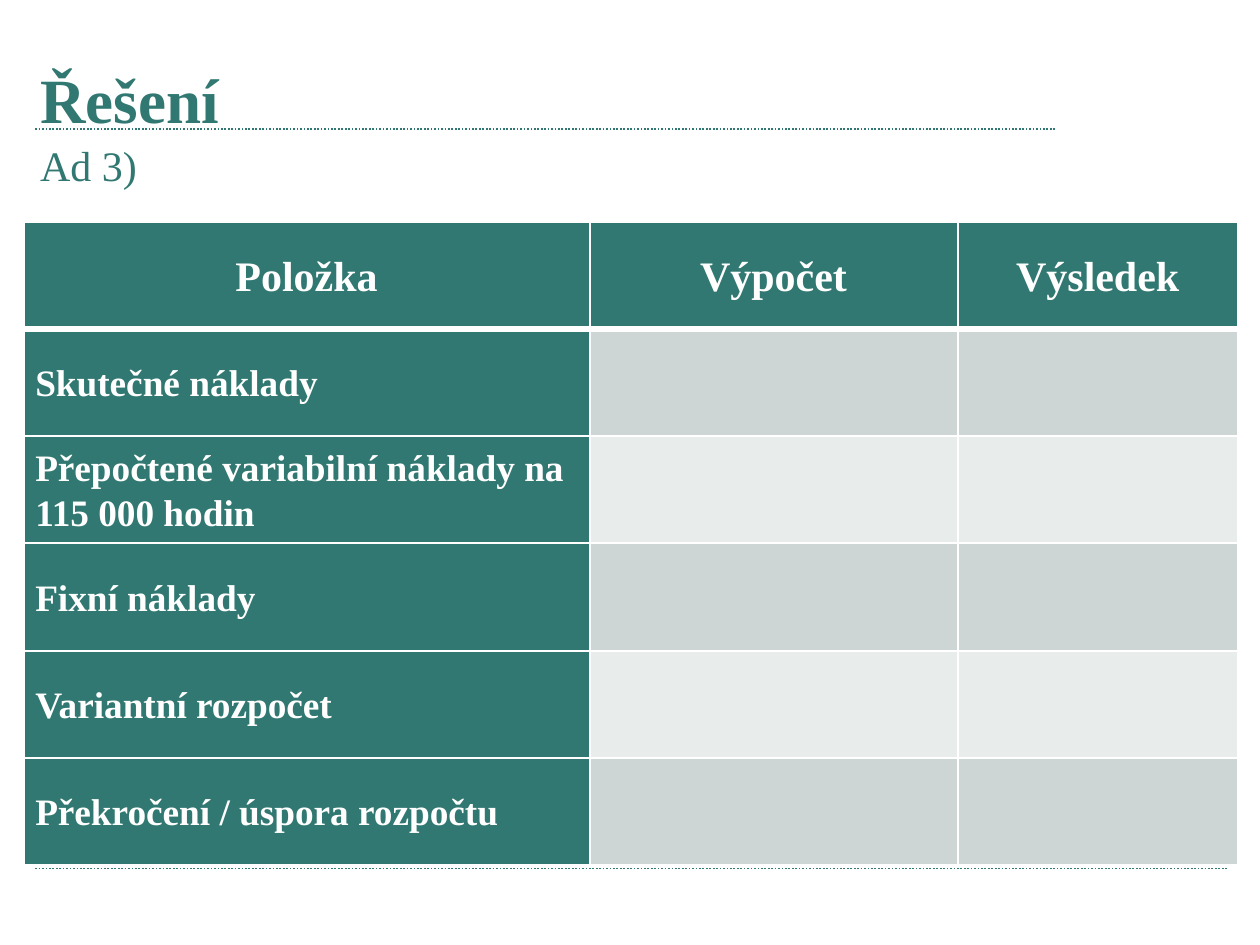
from pptx import Presentation
from pptx.dml.color import RGBColor
from pptx.enum.dml import MSO_LINE as Dash
from pptx.enum.shapes import MSO_CONNECTOR as Conn
from pptx.enum.text import MSO_ANCHOR as Anchor, PP_ALIGN as Align
from pptx.oxml import parse_xml
from pptx.oxml.ns import nsdecls
from pptx.util import Inches, Pt

GREEN, WHITE = "307871", "FFFFFF"
BANDS = ["CDD6D5", "E8ECEB"]
LEFT = Inches(0.14)


def color(code):
    return RGBColor.from_string(code)


def write(para, text, size, code, bold=False):
    run = para.add_run()
    run.text = text
    font = run.font
    font.name, font.size, font.bold = "Times New Roman", Pt(size), bold
    font.color.rgb = color(code)


# Slide in 4:3 format
deck = Presentation()
deck.slide_width = Inches(7.5)
deck.slide_height = deck.slide_width * 3 // 4
slide = deck.slides.add_slide(deck.slide_layouts[5])
shapes = slide.shapes

# Dotted rules under the title and the table
for y, end in [(0.77, 6.29), (5.17, 7.31)]:
    rule = shapes.add_connector(Conn.STRAIGHT, Inches(0.21), Inches(y), Inches(end), Inches(y))
    rule.line.color.rgb = color(GREEN)
    rule.line.width = Pt(0.75)
    rule.line.dash_style = Dash.ROUND_DOT
    rule._element.spPr.append(parse_xml(f"<a:effectLst {nsdecls('a')}/>"))

# Title
title = shapes.title
title.left, title.top, title.width, title.height = LEFT, Inches(0.29), Inches(6.61), Inches(0.59)
title.text_frame.vertical_anchor = Anchor.MIDDLE
head = title.text_frame.paragraphs[0]
head.alignment = Align.LEFT
write(head, "Řešení", 27, GREEN, True)

# Subtitle
box = shapes.add_textbox(LEFT, Inches(0.78), Inches(1.42), Inches(0.4))
box.text_frame.word_wrap = True
write(box.text_frame.paragraphs[0], "Ad 3)", 18, GREEN)

# Table: header row, label column, empty banded cells
rows = [
    ["Položka", "Výpočet", "Výsledek"],
    ["Skutečné náklady"],
    ["Přepočtené variabilní náklady na 115 000 hodin"],
    ["Fixní náklady"],
    ["Variantní rozpočet"],
    ["Překročení / úspora rozpočtu"],
]
widths = [3.37, 2.19, 1.67]
table = shapes.add_table(len(rows), len(widths), LEFT, Inches(1.32),
                         Inches(sum(widths)), Inches(3.83)).table
for col, width in zip(table.columns, widths):
    col.width = Inches(width)

for r, texts in enumerate(rows):
    for c in range(len(widths)):
        cell = table.cell(r, c)
        cell.vertical_anchor = Anchor.MIDDLE
        cell.margin_left = cell.margin_right = Inches(0.07)
        cell.margin_top = cell.margin_bottom = 0
        if c < len(texts):
            para = cell.text_frame.paragraphs[0]
            para.line_spacing = 1.07
            para.alignment = Align.LEFT if r else Align.CENTER
            write(para, texts[c], 16 if r else 18, WHITE, True)

        # White borders, heavier between header and body
        props = cell._tc.get_or_add_tcPr()
        for side in "LRTB":
            heavy = (r, side) in [(0, "B"), (1, "T")]
            props.append(parse_xml(
                f'<a:ln{side} {nsdecls("a")} w="{Pt(3 if heavy else 1)}"><a:solidFill>'
                f'<a:srgbClr val="{WHITE}"/></a:solidFill></a:ln{side}>'))
        cell.fill.solid()
        cell.fill.fore_color.rgb = color(GREEN if r == 0 or c == 0 else BANDS[(r - 1) % 2])

deck.save("out.pptx")
